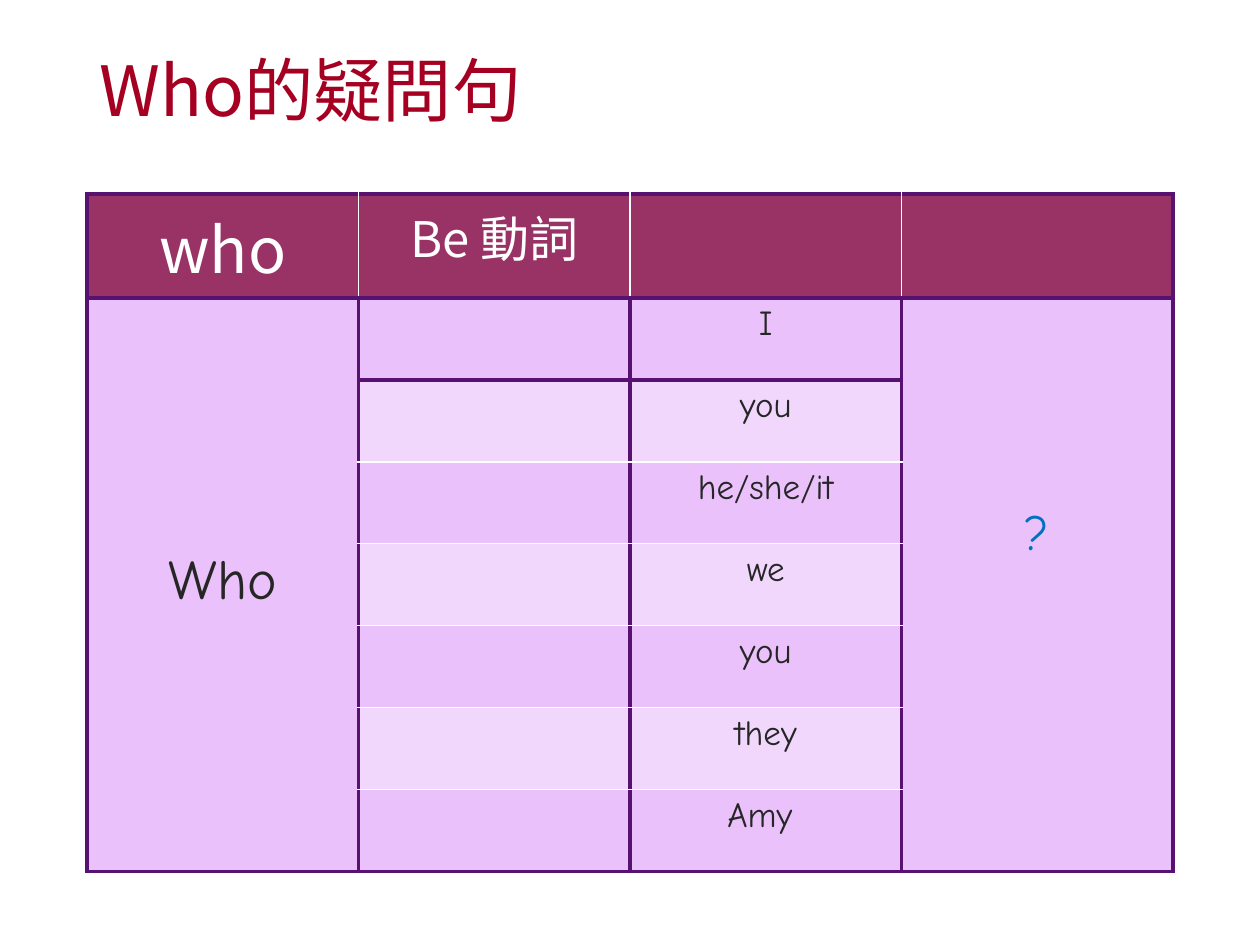
from dataclasses import dataclass

from lxml import etree
from pptx import Presentation
from pptx.dml.color import RGBColor
from pptx.enum.text import MSO_ANCHOR, PP_ALIGN
from pptx.oxml.ns import qn
from pptx.util import Inches, Pt

CENTER, LEFT = PP_ALIGN.CENTER, PP_ALIGN.LEFT
TOP, MIDDLE = MSO_ANCHOR.TOP, MSO_ANCHOR.MIDDLE
SLIDE_W, SLIDE_H = Inches(10), Inches(7.5)
MARGIN = 0.069
HEADER_SHARE, ROW_SHARE = 0.11, 0.0867
CJK, COMIC = "Noto Sans CJK JP", "Comic Neue"
CRIMSON, PLUM, PURPLE, WHITE, INK, BLUE = (
    "A50021", "993366", "561171", "FFFFFF", "262626", "0070C0")
BANDS = ("EAC1FB", "F2D7FD")
THICK, THIN = (PURPLE, 2.25), (WHITE, 1)
HEADERS = ("who", "Be 動詞", "", "")
SUBJECTS = ("I", "you", "he/she/it", "we", "you", "they", "Amy ")
LAST_ROW, LAST_COL = len(SUBJECTS), len(HEADERS) - 1


@dataclass(frozen=True)
class Style:
    """Look of one piece of text."""
    size: float
    font: str
    color: str
    align: int = CENTER


@dataclass(frozen=True)
class TallCell:
    """Text in a column merged over all body rows, raised by a bottom margin."""
    col: int
    text: str
    style: Style
    lift: float


TITLE = Style(39.6, CJK, CRIMSON, LEFT)
HEADER_STYLES = (Style(36, CJK, WHITE),) + (Style(28, CJK, WHITE),) * LAST_COL
SUBJECT = Style(20, COMIC, INK)
TALL_CELLS = (
    TallCell(0, "Who", Style(32, COMIC, INK), 0.11),
    TallCell(LAST_COL, "?", Style(28, COMIC, BLUE), 0.84),
)
TALL_COLS = {tall.col for tall in TALL_CELLS}


def rgb(color: str) -> RGBColor:
    """Turn a hex string into a colour."""
    return RGBColor.from_string(color)


def write(frame, text: str, style: Style) -> None:
    """Put one styled paragraph into a text frame."""
    frame.text = text
    paragraph = frame.paragraphs[0]
    paragraph.alignment = style.align
    for run in paragraph.runs:
        font = run.font
        font.size, font.name, font.bold = Pt(style.size), style.font, False
        font.color.rgb = rgb(style.color)
        east_asian = etree.SubElement(run._r.get_or_add_rPr(), qn("a:ea"))
        east_asian.set("typeface", style.font)


def horizontal_edge(line: int, col: int) -> tuple:
    """Give the rule above table row number line in a column."""
    thin = 2 < line <= LAST_ROW and col not in TALL_COLS
    return THIN if thin else THICK


def vertical_edge(row: int, line: int) -> tuple:
    """Give the rule left of table column number line in a row."""
    return THIN if row == 0 and 0 < line <= LAST_COL else THICK


def paint(cell, row: int, col: int, fill: str) -> None:
    """Set the borders and the fill of a cell."""
    bottom = row + (cell.span_height if cell.is_merge_origin else 1)
    edges = {
        "a:lnL": vertical_edge(row, col),
        "a:lnR": vertical_edge(row, col + 1),
        "a:lnT": horizontal_edge(row, col),
        "a:lnB": horizontal_edge(bottom, col),
    }
    properties = cell._tc.get_or_add_tcPr()
    for tag, (color, width) in edges.items():
        line = etree.SubElement(properties, qn(tag), w=str(Pt(width)))
        solid = etree.SubElement(line, qn("a:solidFill"))
        etree.SubElement(solid, qn("a:srgbClr"), val=color)
    cell.fill.solid()
    cell.fill.fore_color.rgb = rgb(fill)


def add_title(slide, text: str) -> None:
    """Draw the slide title."""
    box = slide.shapes.add_textbox(
        int(SLIDE_W * MARGIN), Inches(0.4),
        int(SLIDE_W * (1 - 2 * MARGIN)), Inches(0.7))
    frame = box.text_frame
    frame.word_wrap, frame.vertical_anchor = True, MIDDLE
    write(frame, text, TITLE)
    frame.paragraphs[0].line_spacing = 0.9


def add_grammar_table(slide) -> None:
    """Draw the table of who questions."""
    heights = [HEADER_SHARE] + [ROW_SHARE] * LAST_ROW
    table = slide.shapes.add_table(
        LAST_ROW + 1, LAST_COL + 1,
        int(SLIDE_W * MARGIN), Inches(1.54),
        int(SLIDE_W * (1 - 2 * MARGIN)), int(SLIDE_H * sum(heights))).table
    table.first_row = table.horz_banding = False
    for row, share in zip(table.rows, heights):
        row.height = int(SLIDE_H * share)
    for tall in TALL_CELLS:
        cell = table.cell(1, tall.col)
        cell.merge(table.cell(LAST_ROW, tall.col))
        write(cell.text_frame, tall.text, tall.style)
        cell.vertical_anchor, cell.margin_bottom = MIDDLE, Inches(tall.lift)
    for col, (header, style) in enumerate(zip(HEADERS, HEADER_STYLES)):
        write(table.cell(0, col).text_frame, header, style)
    for row, subject in enumerate(SUBJECTS, 1):
        cell = table.cell(row, 2)
        write(cell.text_frame, subject, SUBJECT)
        cell.vertical_anchor = TOP
    for row in range(LAST_ROW + 1):
        for col in range(LAST_COL + 1):
            cell = table.cell(row, col)
            if not cell.is_spanned:
                paint(cell, row, col, BANDS[(row - 1) % 2] if row else PLUM)


def main() -> None:
    """Build the slide and save it."""
    deck = Presentation()
    deck.slide_width, deck.slide_height = SLIDE_W, SLIDE_H
    slide = deck.slides.add_slide(deck.slide_layouts[6])
    add_title(slide, "Who的疑問句")
    add_grammar_table(slide)
    deck.save("out.pptx")


if __name__ == "__main__":
    main()
